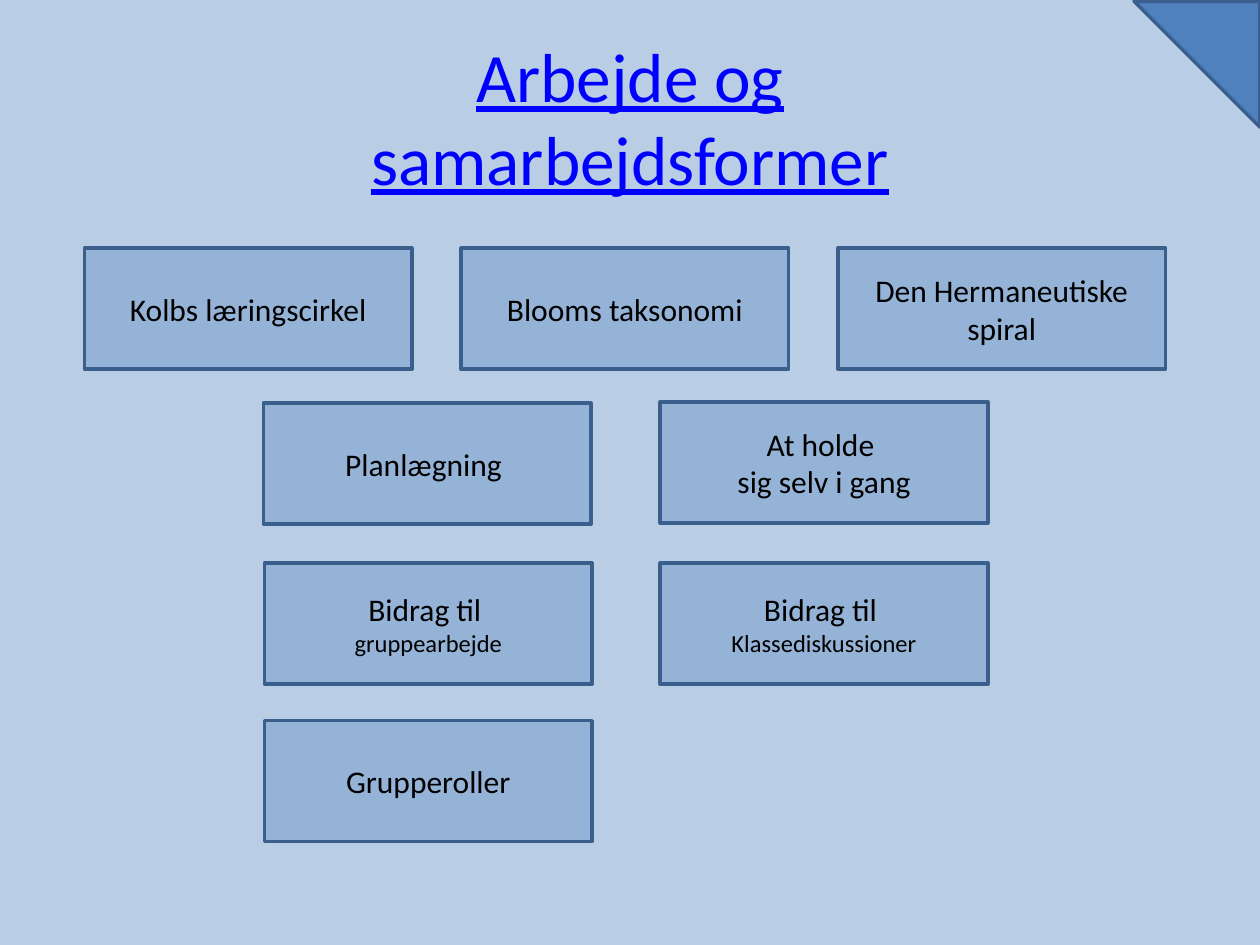
from dataclasses import dataclass

from pptx import Presentation
from pptx.dml.color import RGBColor
from pptx.enum.shapes import MSO_SHAPE
from pptx.enum.text import MSO_ANCHOR, MSO_AUTO_SIZE, PP_ALIGN
from pptx.shapes.autoshape import Shape
from pptx.slide import Slide
from pptx.text.text import TextFrame
from pptx.util import Inches, Pt

BACKGROUND = RGBColor(0xB9, 0xCD, 0xE5)
BOX_FILL = RGBColor(0x95, 0xB3, 0xD7)
CORNER_FILL = RGBColor(0x4F, 0x81, 0xBD)
OUTLINE = RGBColor(0x3A, 0x5F, 0x8C)
TITLE_COLOR = RGBColor(0x00, 0x00, 0xFF)
TEXT_COLOR = RGBColor(0x00, 0x00, 0x00)
FONT = "Calibri"

BOX_WIDTH, BOX_HEIGHT = 2.6, 0.96
TOP_ROW_LEFT, TOP_ROW_STEP, TOP_ROW_TOP = 0.67, 2.99, 1.97
LEFT_COLUMN, RIGHT_COLUMN = 2.1, 5.24


@dataclass
class TopicBox:
    left: float
    top: float
    text: str
    second_line_size: float = 18


TOP_ROW_TOPICS = ["Kolbs læringscirkel", "Blooms taksonomi", "Den Hermaneutiske spiral"]
TOPIC_BOXES = [
    TopicBox(TOP_ROW_LEFT + column * TOP_ROW_STEP, TOP_ROW_TOP, topic)
    for column, topic in enumerate(TOP_ROW_TOPICS)
] + [
    TopicBox(2.09, 3.2, "Planlægning "),
    TopicBox(RIGHT_COLUMN, 3.19, "At holde \nsig selv i gang"),
    TopicBox(LEFT_COLUMN, 4.47, "Bidrag til \ngruppearbejde", 14),
    TopicBox(RIGHT_COLUMN, 4.47, "Bidrag til \nKlassediskussioner", 14),
    TopicBox(LEFT_COLUMN, 5.72, "Grupperoller"),
]


def format_text(text_frame: TextFrame, sizes: list[float], color: RGBColor) -> None:
    """Centre the text and give each paragraph its size."""
    text_frame.word_wrap = True
    text_frame.vertical_anchor = MSO_ANCHOR.MIDDLE
    for paragraph, size in zip(text_frame.paragraphs, sizes):
        paragraph.alignment = PP_ALIGN.CENTER
        for run in paragraph.runs:
            run.font.name = FONT
            run.font.size = Pt(size)
            run.font.color.rgb = color


def add_outlined_shape(slide: Slide, kind: MSO_SHAPE, left: float, top: float,
                       width: float, height: float, fill: RGBColor) -> Shape:
    shape = slide.shapes.add_shape(
        kind, Inches(left), Inches(top), Inches(width), Inches(height))
    shape.shadow.inherit = False
    shape.fill.solid()
    shape.fill.fore_color.rgb = fill
    shape.line.color.rgb = OUTLINE
    shape.line.width = Pt(2)
    return shape


def add_topic_box(slide: Slide, box: TopicBox) -> None:
    shape = add_outlined_shape(slide, MSO_SHAPE.RECTANGLE, box.left, box.top,
                               BOX_WIDTH, BOX_HEIGHT, BOX_FILL)
    shape.text_frame.text = box.text
    format_text(shape.text_frame, [18, box.second_line_size], TEXT_COLOR)


def add_title(slide: Slide) -> None:
    title = slide.shapes.title
    title.left, title.top = Inches(0.5), Inches(0.3)
    title.width, title.height = Inches(9), Inches(1.24)
    title.text_frame.text = "Arbejde og\vsamarbejdsformer"
    title.text_frame.auto_size = MSO_AUTO_SIZE.NONE
    format_text(title.text_frame, [39.6], TITLE_COLOR)
    for run in title.text_frame.paragraphs[0].runs:
        run.font.underline = True


def main() -> None:
    presentation = Presentation()
    presentation.slide_width = Inches(10)
    presentation.slide_height = Inches(7.5)
    slide = presentation.slides.add_slide(presentation.slide_layouts[5])
    slide.background.fill.solid()
    slide.background.fill.fore_color.rgb = BACKGROUND

    add_title(slide)

    # Topic boxes
    for box in TOPIC_BOXES:
        add_topic_box(slide, box)

    # Corner triangle
    corner = add_outlined_shape(slide, MSO_SHAPE.RIGHT_TRIANGLE, 9, 0.01, 1, 1, CORNER_FILL)
    corner.rotation = 180

    presentation.save("out.pptx")


if __name__ == "__main__":
    main()
